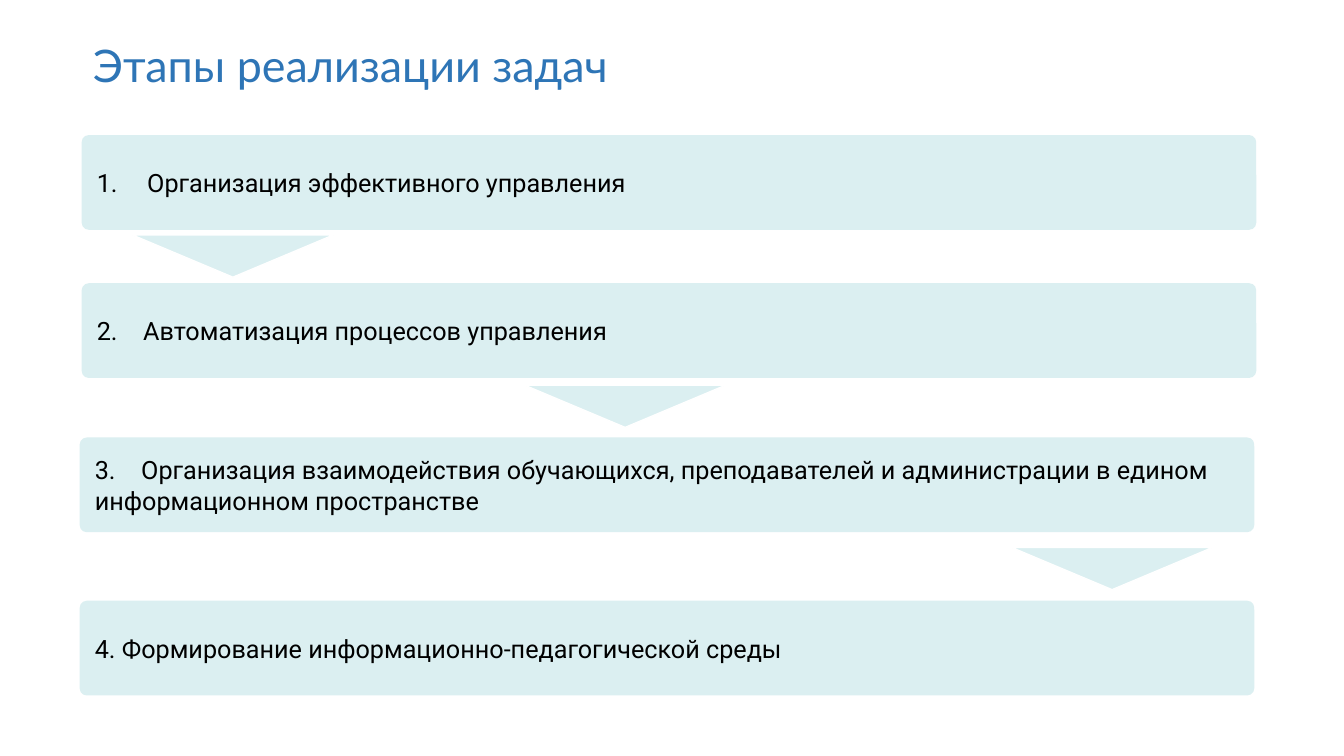
"""Builds a slide with four stages joined by downward triangles."""
from lxml import etree
from pptx import Presentation
from pptx.dml.color import RGBColor
from pptx.enum.shapes import MSO_SHAPE
from pptx.enum.text import MSO_ANCHOR, PP_ALIGN
from pptx.oxml.ns import qn
from pptx.util import Inches, Pt

ROUNDED = MSO_SHAPE.ROUNDED_RECTANGLE
TRIANGLE = MSO_SHAPE.ISOSCELES_TRIANGLE
MIDDLE = MSO_ANCHOR.MIDDLE
TOP = MSO_ANCHOR.TOP
LEFT = PP_ALIGN.LEFT

TITLE_BLUE = RGBColor(0x2E, 0x75, 0xB6)
PALE_TEAL = RGBColor(0xDB, 0xEF, 0xF1)
BLACK = RGBColor(0, 0, 0)
WHITE = RGBColor(255, 255, 255)

STAGES = [
    (0.81, 1.34, "Организация эффективного управления", True),
    (0.81, 2.81, "2.\tАвтоматизация процессов управления", False),
    (0.79, 4.34, "3.\tОрганизация взаимодействия обучающихся, преподавателей "
                 "и администрации в едином информационном пространстве", False),
    (0.79, 5.96, "4. Формирование информационно-педагогической среды", False),
]
ARROWS = [(1.31, 2.33), (5.2, 3.82), (10.03, 5.43)]


def write_text(shape, text, *, size, font, color, anchor=TOP, spacing=0):
    """Fill a shape with one formatted paragraph and return it."""
    frame = shape.text_frame
    frame.word_wrap = True
    frame.vertical_anchor = anchor
    frame.margin_left = frame.margin_right = Inches(0.13)
    frame.margin_top = frame.margin_bottom = Inches(0.07)
    paragraph = frame.paragraphs[0]
    paragraph.alignment = LEFT
    paragraph.space_before = paragraph.space_after = Pt(spacing)
    run = paragraph.add_run()
    run.text = text
    run.font.size = Pt(size)
    run.font.name = font
    run.font.color.rgb = color
    return paragraph


def set_number(paragraph):
    """Number a paragraph with a hanging indent."""
    properties = paragraph._p.get_or_add_pPr()
    properties.set("marL", str(Inches(0.5)))
    properties.set("indent", str(-Inches(0.5)))
    etree.SubElement(properties, qn("a:buFont"), typeface="+mj-lt")
    etree.SubElement(properties, qn("a:buAutoNum"), type="arabicPeriod")


def set_tab_stop(paragraph, position):
    """Set the tab stop that separates a number from its text."""
    tabs = etree.SubElement(paragraph._p.get_or_add_pPr(), qn("a:tabLst"))
    etree.SubElement(tabs, qn("a:tab"), pos=str(Inches(position)), algn="l")


def add_filled(slide, kind, left, top, width, height):
    """Add a pale preset shape without a shadow."""
    shape = slide.shapes.add_shape(
        kind, Inches(left), Inches(top), Inches(width), Inches(height))
    shape.shadow.inherit = False
    shape.fill.solid()
    shape.fill.fore_color.rgb = PALE_TEAL
    return shape


def add_title(slide, text):
    """Add the slide heading."""
    title = slide.shapes.add_textbox(
        Inches(0.79), Inches(0.3), Inches(10.01), Inches(0.67))
    write_text(title, text, size=32, font="Lato", color=TITLE_BLUE)


def add_stage(slide, left, top, text, numbered):
    """Add one stage bar."""
    bar = add_filled(slide, ROUNDED, left, top, 11.65, 0.94)
    bar.adjustments[0] = 0.075
    bar.line.fill.background()
    paragraph = write_text(bar, text, size=18, font="Roboto", color=BLACK,
                           anchor=MIDDLE, spacing=16)
    if numbered:
        set_number(paragraph)
    else:
        set_tab_stop(paragraph, 0.46)


def add_arrow(slide, left, top):
    """Add a triangle pointing down to the next stage."""
    arrow = add_filled(slide, TRIANGLE, left, top, 2, 0.42)
    arrow.rotation = 180
    arrow.line.color.rgb = WHITE
    arrow.line.width = Pt(1)


def main():
    """Build and save the slide."""
    deck = Presentation()
    deck.slide_width = Inches(13.33)
    deck.slide_height = Inches(7.5)
    slide = deck.slides.add_slide(deck.slide_layouts[6])
    add_title(slide, "Этапы реализации задач")
    for stage in STAGES:
        add_stage(slide, *stage)
    for arrow in ARROWS:
        add_arrow(slide, *arrow)
    deck.save("out.pptx")


if __name__ == "__main__":
    main()
